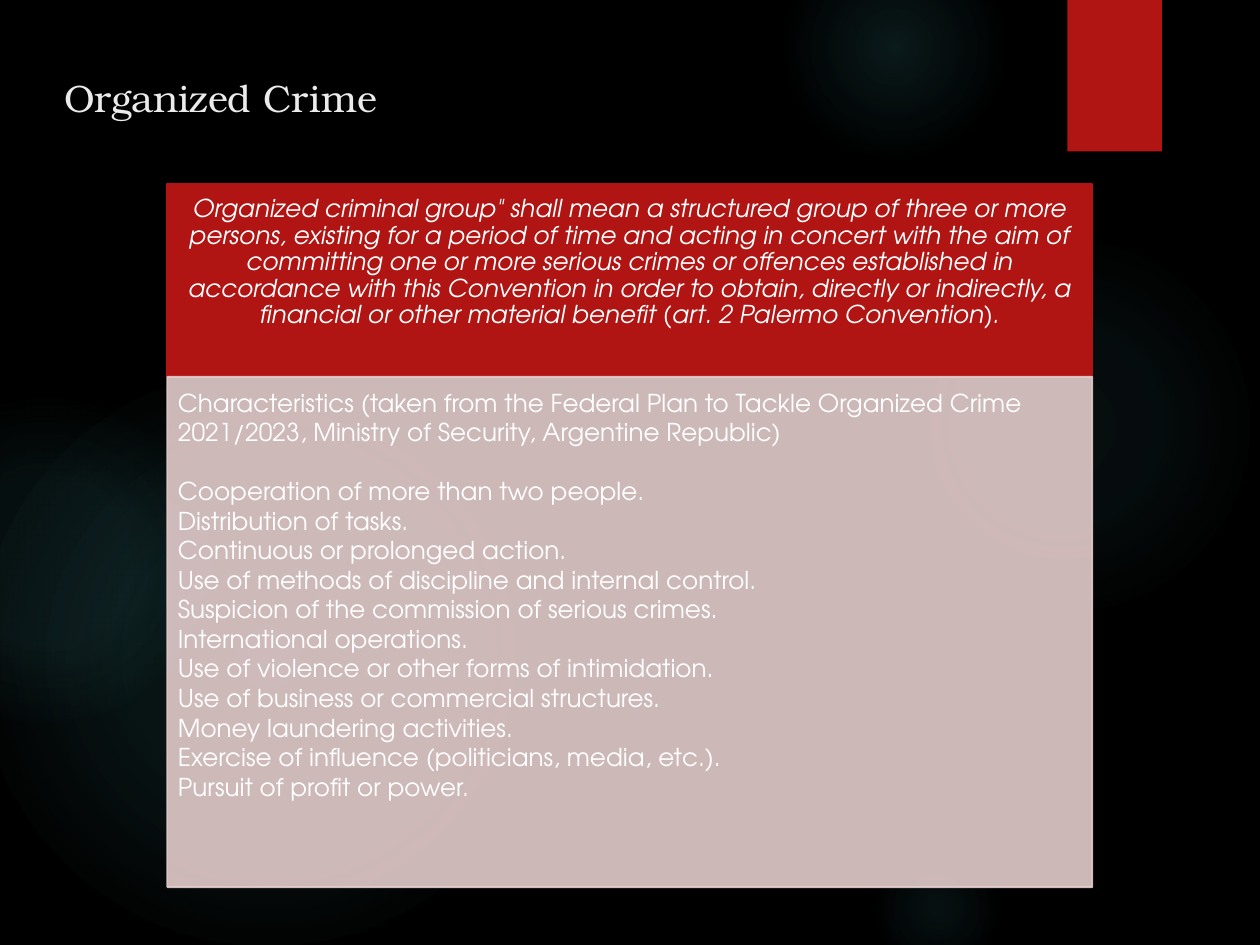
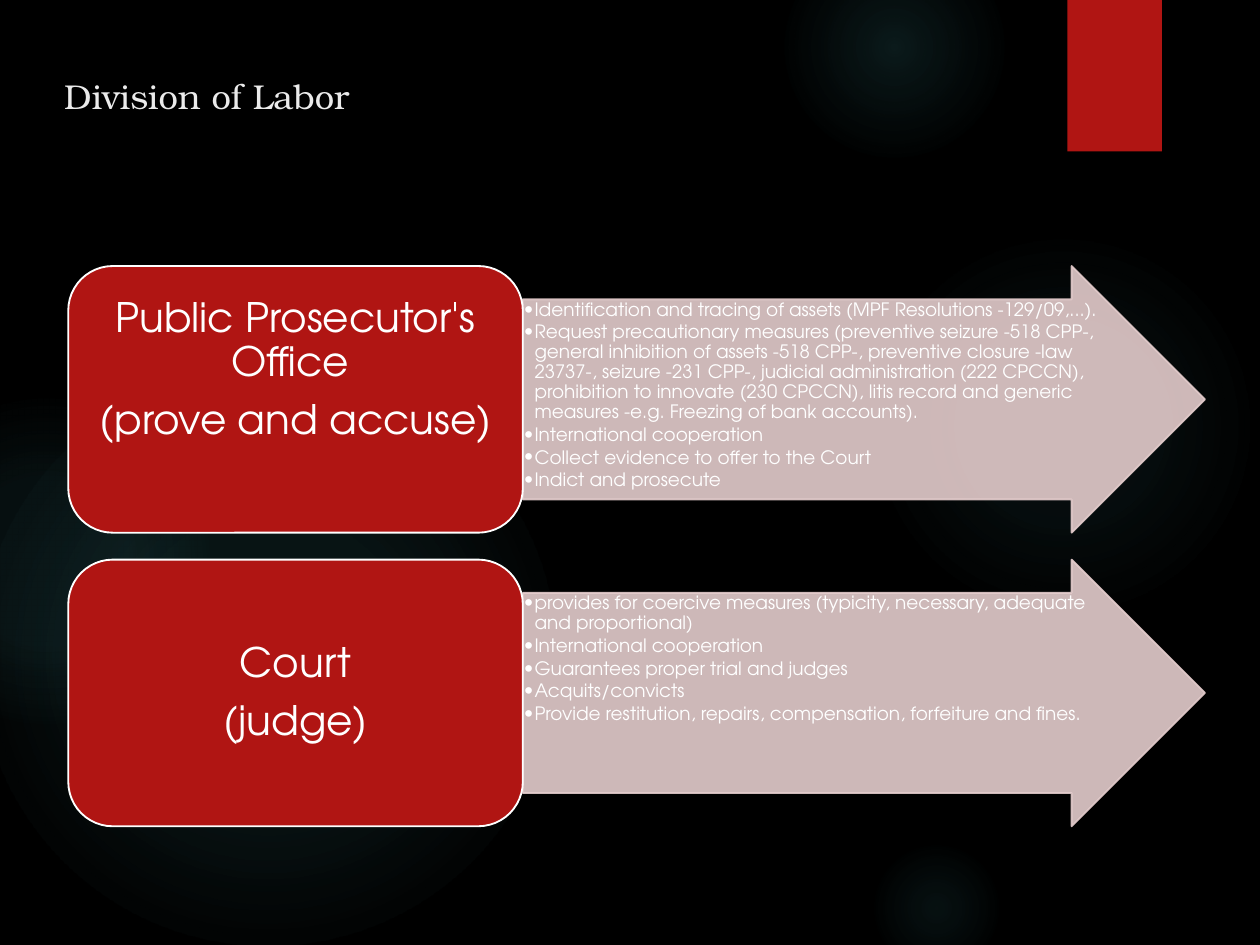
from dataclasses import dataclass

from pptx import Presentation
from pptx.dml.color import RGBColor
from pptx.enum.shapes import MSO_SHAPE
from pptx.enum.text import MSO_ANCHOR, MSO_AUTO_SIZE, PP_ALIGN
from pptx.oxml import parse_xml
from pptx.oxml.ns import nsdecls, qn
from pptx.shapes.autoshape import Shape
from pptx.slide import Slide, SlideLayout
from pptx.util import Pt

BLACK = RGBColor(0x00, 0x00, 0x00)
WHITE = RGBColor(0xFF, 0xFF, 0xFF)
TITLE_GREY = RGBColor(0xEB, 0xEB, 0xEB)
RED = RGBColor(0xB0, 0x15, 0x13)
PINK = RGBColor(0xE4, 0xCC, 0xCC)
TEAL = RGBColor(0x50, 0xB9, 0xC1)
TITLE_FONT = "TeX Gyre Bonum"
BODY_FONT = "TeX Gyre Adventor"
PINK_OPACITY = 90


@dataclass(frozen=True)
class Box:
    """A place on the slide, in points."""

    left: float
    top: float
    width: float
    height: float


@dataclass(frozen=True)
class Glow:
    """A round light with (position, opacity) stops in percent."""

    left: float
    top: float
    diameter: float
    stops: tuple[tuple[int, int], ...]


@dataclass(frozen=True)
class TextStyle:
    """How the paragraphs of one shape are set."""

    size: float
    align: PP_ALIGN = PP_ALIGN.LEFT
    line_spacing: float = 1.0
    space_after: float = 0
    italic: bool = False
    bulleted: bool = False


@dataclass(frozen=True)
class Role:
    """An institution, its tasks and the space kept under its name."""

    name_lines: tuple[str, ...]
    tasks: tuple[str, ...]
    bottom_inset: float


GLOWS = (
    Glow(705.6, 187.9, 316, ((0, 7), (36, 6), (69, 0))),
    Glow(637.2, -51.1, 179.3, ((0, 14), (36, 7), (73, 0))),
    Glow(705.6, 682.6, 110.9, ((0, 9), (36, 5), (66, 0))),
    Glow(-17.3, 298.8, 469.4, ((0, 11), (36, 10), (75, 0))),
    Glow(-94.3, 324, 264.2, ((0, 8), (36, 8), (72, 0))),
)
RIBBON = Box(867.4, 0, 77, 123)
TITLE = Box(45, 57, 933.8, 57)

DEFINITION_BOX = Box(136, 149.3, 751.7, 157)
TRAITS_BOX = Box(136, 306.3, 751.7, 414.7)
DEFINITION_STYLE = TextStyle(20, PP_ALIGN.CENTER, 0.9, 7, italic=True)
TRAITS_STYLE = TextStyle(20)
TRAITS_LEAD_GAP = 24
DEFINITION = (
    'Organized criminal group" shall mean a structured group of three or more persons, '
    "existing for a period of time and acting in concert with the aim of committing one or "
    "more serious crimes or offences established in accordance with this Convention in order "
    "to obtain, directly or indirectly, a financial or other material benefit "
    "(art. 2 Palermo Convention)."
)
TRAITS = (
    "Characteristics (taken from the Federal Plan to Tackle Organized Crime 2021/2023, "
    "Ministry of Security, Argentine Republic)",
    "Cooperation of more than two people.",
    "Distribution of tasks.",
    "Continuous or prolonged action.",
    "Use of methods of discipline and internal control.",
    "Suspicion of the commission of serious crimes.",
    "International operations.",
    "Use of violence or other forms of intimidation.",
    "Use of business or commercial structures.",
    "Money laundering activities.",
    "Exercise of influence (politicians, media, etc.).",
    "Pursuit of profit or power.",
)

ROLE_TOP, ROLE_HEIGHT, ROLE_PITCH = 216.2, 216.7, 238.6
NAME_LEFT, NAME_WIDTH, TASKS_WIDTH = 55.5, 369.4, 554.4
BULLET_INDENT = 8.64
NAME_STYLE = TextStyle(33, PP_ALIGN.CENTER, 0.9, 11.55)
TASK_STYLE = TextStyle(15, PP_ALIGN.LEFT, 0.9, 2.25, bulleted=True)
ROLES = (
    Role(
        ("Public Prosecutor's Office ", "(prove and accuse)"),
        (
            "Identification and tracing of assets (MPF Resolutions -129/09,...).",
            "Request precautionary measures (preventive seizure -518 CPP-, general inhibition "
            "of assets -518 CPP-, preventive closure -law 23737-, seizure -231 CPP-, judicial "
            "administration (222 CPCCN), prohibition to innovate (230 CPCCN), litis record and "
            "generic measures -e.g. Freezing of bank accounts).",
            "International cooperation",
            "Collect evidence to offer to the Court",
            "Indict and prosecute",
        ),
        52,
    ),
    Role(
        ("Court", "(judge)"),
        (
            "provides for coercive measures (typicity, necessary, adequate and proportional)",
            "International cooperation",
            "Guarantees proper trial and judges",
            "Acquits/convicts",
            "Provide restitution, repairs, compensation, forfeiture and fines.",
        ),
        5,
    ),
)


def add_block(slide: Slide, preset: MSO_SHAPE, box: Box, fill: RGBColor,
              outline: RGBColor | None = None, opacity: int = 100) -> Shape:
    """Draw a preset shape with a flat fill and an optional outline."""
    block = slide.shapes.add_shape(
        preset, Pt(box.left), Pt(box.top), Pt(box.width), Pt(box.height))
    block.shadow.inherit = False
    block.fill.solid()
    block.fill.fore_color.rgb = fill
    if outline is None:
        block.line.fill.background()
    else:
        block.line.color.rgb = outline
        block.line.width = Pt(1.5)
    if opacity < 100:
        for colour in block.element.spPr.iter(qn("a:srgbClr")):
            colour.append(parse_xml(f'<a:alpha {nsdecls("a")} val="{opacity * 1000}"/>'))
    return block


def write(block: Shape, lines: tuple[str, ...], style: TextStyle,
          insets: tuple[float, float, float, float], anchor: MSO_ANCHOR) -> None:
    """Fill a shape with paragraphs; insets run left, top, right, bottom."""
    frame = block.text_frame
    frame.word_wrap = True
    frame.vertical_anchor = anchor
    frame.margin_left, frame.margin_top, frame.margin_right, frame.margin_bottom = map(Pt, insets)
    for index, line in enumerate(lines):
        paragraph = frame.add_paragraph() if index else frame.paragraphs[0]
        paragraph.alignment = style.align
        paragraph.line_spacing = style.line_spacing
        paragraph.space_after = Pt(style.space_after)
        if style.bulleted:
            properties = paragraph._p.get_or_add_pPr()
            properties.set("marL", str(Pt(BULLET_INDENT)))
            properties.set("indent", str(-Pt(BULLET_INDENT)))
            properties.append(parse_xml(f'<a:buFont {nsdecls("a")} typeface="{BODY_FONT}"/>'))
            properties.append(parse_xml(f'<a:buChar {nsdecls("a")} char="•"/>'))
        run = paragraph.add_run()
        run.text = line
        run.font.name = BODY_FONT
        run.font.size = Pt(style.size)
        run.font.italic = style.italic
        run.font.color.rgb = WHITE


def add_glow(slide: Slide, glow: Glow) -> Shape:
    """Draw a light that fades out from its centre."""
    light = add_block(slide, MSO_SHAPE.OVAL,
                      Box(glow.left, glow.top, glow.diameter, glow.diameter), TEAL)
    stops = "".join(
        f'<a:gs pos="{position * 1000}"><a:srgbClr val="{TEAL}">'
        f'<a:alpha val="{opacity * 1000}"/></a:srgbClr></a:gs>'
        for position, opacity in glow.stops)
    gradient = parse_xml(
        f'<a:gradFill {nsdecls("a")} rotWithShape="1"><a:gsLst>{stops}</a:gsLst>'
        '<a:path path="circle"><a:fillToRect l="50000" t="50000" r="50000" b="50000"/></a:path>'
        "</a:gradFill>")
    properties = light.element.spPr
    properties.replace(properties.find(qn("a:solidFill")), gradient)
    return light


def dress_layout(layout: SlideLayout, slide: Slide) -> None:
    """Give the layout its black ground, lights and ribbon."""
    layout.background.fill.solid()
    layout.background.fill.fore_color.rgb = BLACK
    for placeholder in list(layout.placeholders):
        if placeholder.placeholder_format.idx:
            placeholder.element.getparent().remove(placeholder.element)
    decorations = [add_glow(slide, glow) for glow in GLOWS]
    decorations.append(add_block(slide, MSO_SHAPE.RECTANGLE, RIBBON, RED))
    for decoration in decorations:
        layout.shapes.element.append(decoration.element)


def set_title(slide: Slide, wording: str, size: float) -> None:
    """Place and format the title."""
    title = slide.shapes.title
    title.left, title.top = Pt(TITLE.left), Pt(TITLE.top)
    title.width, title.height = Pt(TITLE.width), Pt(TITLE.height)
    frame = title.text_frame
    frame.auto_size = MSO_AUTO_SIZE.NONE
    frame.word_wrap = True
    frame.vertical_anchor = MSO_ANCHOR.TOP
    paragraph = frame.paragraphs[0]
    paragraph.alignment = PP_ALIGN.LEFT
    run = paragraph.add_run()
    run.text = wording
    run.font.name = TITLE_FONT
    run.font.size = Pt(size)
    run.font.color.rgb = TITLE_GREY


def build_organized_crime(slide: Slide) -> None:
    """Show the definition above the list of traits."""
    set_title(slide, "Organized Crime", 31)
    definition = add_block(slide, MSO_SHAPE.RECTANGLE, DEFINITION_BOX, RED, RED)
    write(definition, (DEFINITION,), DEFINITION_STYLE, (11.5, 6.5, 11.5, 35), MSO_ANCHOR.MIDDLE)
    traits = add_block(slide, MSO_SHAPE.RECTANGLE, TRAITS_BOX, PINK, PINK, PINK_OPACITY)
    write(traits, TRAITS, TRAITS_STYLE, (8.6, 8.6, 11.5, 12.2), MSO_ANCHOR.TOP)
    traits.text_frame.paragraphs[0].space_after = Pt(TRAITS_LEAD_GAP)


def add_role(slide: Slide, role: Role, top: float) -> None:
    """Draw an institution with the arrow that lists its tasks."""
    tasks = add_block(slide, MSO_SHAPE.RIGHT_ARROW,
                      Box(NAME_LEFT + NAME_WIDTH, top, TASKS_WIDTH, ROLE_HEIGHT),
                      PINK, PINK, PINK_OPACITY)
    tasks.adjustments[0], tasks.adjustments[1] = 0.75, 0.5
    write(tasks, role.tasks, TASK_STYLE, (0.9, 0.7, 0.7, 0.7), MSO_ANCHOR.TOP)
    name = add_block(slide, MSO_SHAPE.ROUNDED_RECTANGLE,
                     Box(NAME_LEFT, top, NAME_WIDTH, ROLE_HEIGHT), RED, WHITE)
    write(name, role.name_lines, NAME_STYLE, (10, 5, 10, role.bottom_inset), MSO_ANCHOR.MIDDLE)


def build_division_of_labor(slide: Slide) -> None:
    """Show the institutions one below the other."""
    set_title(slide, "Division of Labor", 28)
    for index, role in enumerate(ROLES):
        add_role(slide, role, ROLE_TOP + index * ROLE_PITCH)


def main() -> None:
    """Build and save the presentation."""
    deck = Presentation()
    deck.slide_width, deck.slide_height = Pt(1024), Pt(768)
    title_only = deck.slide_layouts[5]
    crime_slide = deck.slides.add_slide(title_only)
    dress_layout(title_only, crime_slide)
    build_organized_crime(crime_slide)
    build_division_of_labor(deck.slides.add_slide(title_only))
    deck.save("out.pptx")


if __name__ == "__main__":
    main()
